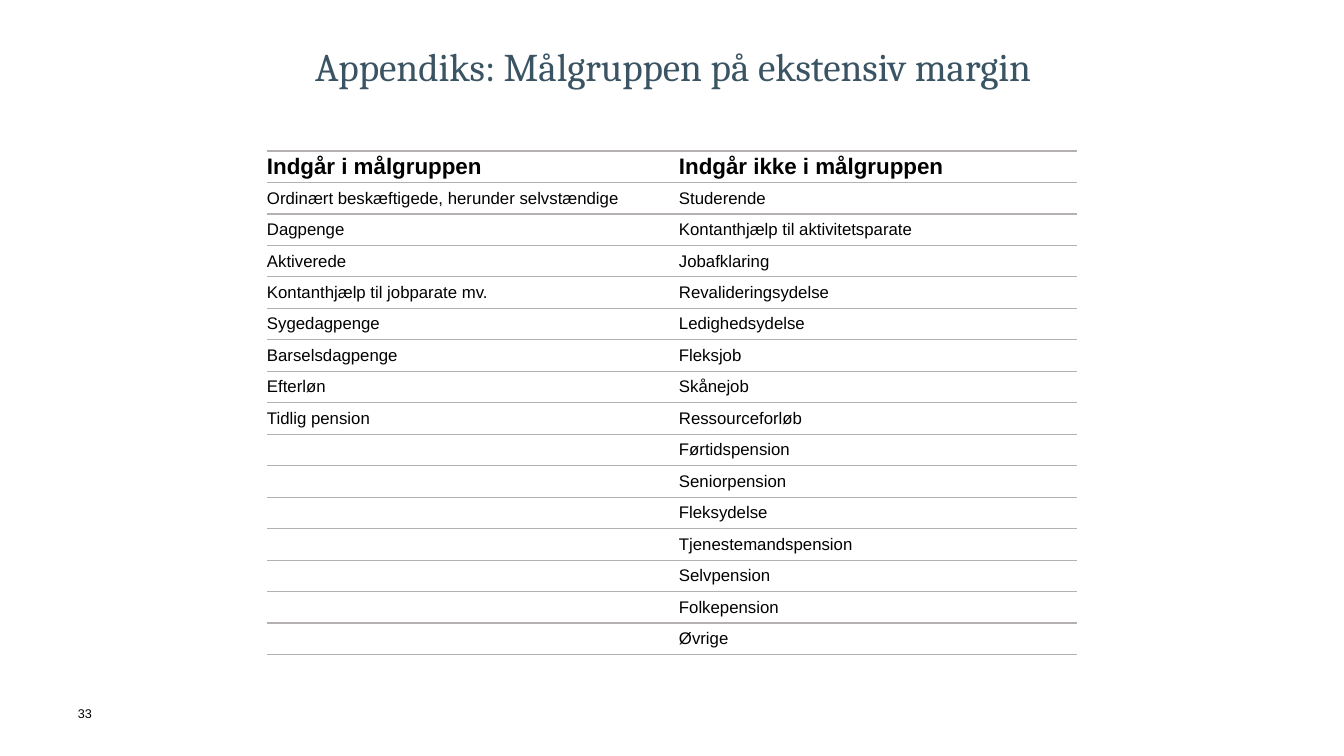
from itertools import zip_longest

from lxml.etree import SubElement
from pptx import Presentation
from pptx.dml.color import RGBColor
from pptx.enum.text import MSO_ANCHOR as Anchor, PP_ALIGN as Align
from pptx.oxml.ns import qn
from pptx.util import Emu, Pt

IN_GROUP = [
    "Indgår i målgruppen",
    "Ordinært beskæftigede, herunder selvstændige",
    "Dagpenge",
    "Aktiverede",
    "Kontanthjælp til jobparate mv.",
    "Sygedagpenge",
    "Barselsdagpenge",
    "Efterløn",
    "Tidlig pension",
]
OUT_GROUP = [
    "Indgår ikke i målgruppen",
    "Studerende",
    "Kontanthjælp til aktivitetsparate",
    "Jobafklaring",
    "Revalideringsydelse",
    "Ledighedsydelse",
    "Fleksjob",
    "Skånejob",
    "Ressourceforløb",
    "Førtidspension",
    "Seniorpension",
    "Fleksydelse",
    "Tjenestemandspension",
    "Selvpension",
    "Folkepension",
    "Øvrige",
]


def px(length):
    return Emu(round(length * 914400 / 100.8))


def color(value):
    return RGBColor.from_string(value)


class SlideBuilder:
    """Holds the style and the current slide, and adds elements to it."""

    BODY_FONT, TITLE_FONT = "Arial", "Cambria"
    BLACK, TITLE_COLOR, RULE_COLOR = "000000", "3B5463", "B5B1B1"

    def __init__(self, slide):
        self.slide = slide

    def set_text(self, paragraph, text, size, font=BODY_FONT, ink=BLACK, bold=False):
        paragraph.text = text
        for run in paragraph.runs:
            run.font.name, run.font.size, run.font.bold = font, Pt(size), bold
            run.font.color.rgb = color(ink)

    def text_box(self, left, top, width, height, right_inset=0):
        frame = self.slide.shapes.add_textbox(
            px(left), px(top), px(width), px(height)).text_frame
        frame.word_wrap = True
        frame.margin_left = frame.margin_top = frame.margin_bottom = 0
        frame.margin_right = px(right_inset)
        return frame.paragraphs[0]

    def title(self, text):
        heading = self.text_box(69, 48, 1322, 103, right_inset=114)
        self.set_text(heading, text, 28, self.TITLE_FONT, self.TITLE_COLOR)
        heading.alignment = Align.CENTER
        heading.line_spacing = 0.9

    def page_number(self, number):
        self.set_text(self.text_box(78, 706, 31, 30), str(number), 9)

    def rule_cell(self, cell):
        properties = cell._tc.get_or_add_tcPr()
        for side in "LRTB":
            line = SubElement(properties, qn(f"a:ln{side}"), w=str(Pt(1)))
            if side in "LR":
                SubElement(line, qn("a:noFill"))
            else:
                fill = SubElement(line, qn("a:solidFill"))
                SubElement(fill, qn("a:srgbClr"), val=self.RULE_COLOR)

    def table(self, rows, left, top, widths, height):
        table = self.slide.shapes.add_table(
            len(rows), len(widths), px(left), px(top), px(sum(widths)), px(height)).table
        table.horz_banding = False
        table.first_row = False
        for column, width in zip(table.columns, widths):
            column.width = px(width)
        for r, row in enumerate(rows):
            for c, text in enumerate(row):
                cell = table.cell(r, c)
                cell.margin_left = cell.margin_right = 0
                cell.margin_top = cell.margin_bottom = 0
                cell.vertical_anchor = Anchor.MIDDLE
                self.rule_cell(cell)
                cell.fill.background()
                header = r == 0
                self.set_text(cell.text_frame.paragraphs[0], text,
                              16 if header else 12, bold=header)


def main():
    deck = Presentation()
    deck.slide_width, deck.slide_height = px(1344), px(756)
    builder = SlideBuilder(deck.slides.add_slide(deck.slide_layouts[6]))
    builder.page_number(33)
    builder.title("Appendiks: Målgruppen på ekstensiv margin")
    rows = list(zip_longest(IN_GROUP, OUT_GROUP, fillvalue=""))
    builder.table(rows, 267, 151, [412, 398], 504)
    deck.save("out.pptx")


if __name__ == "__main__":
    main()
